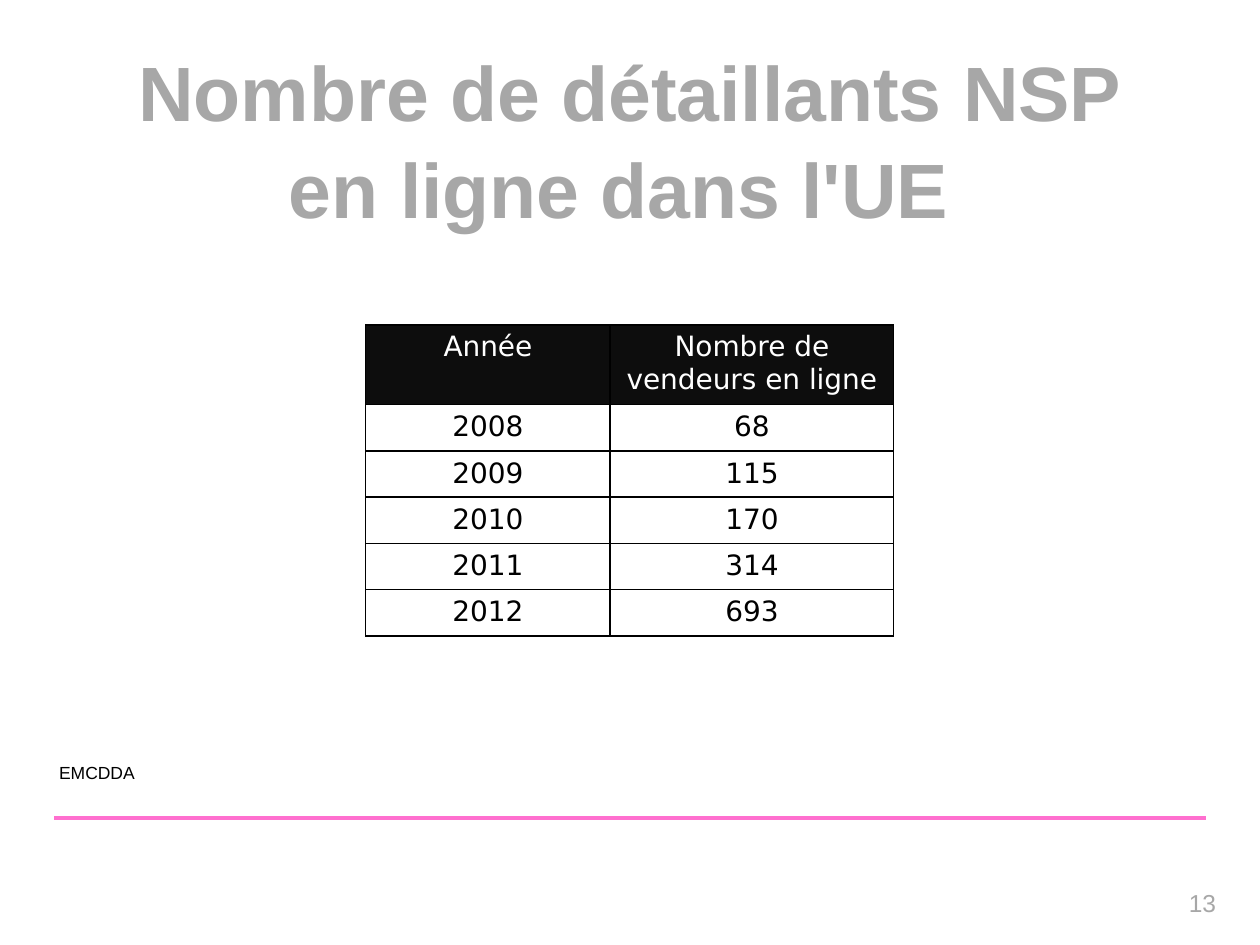
"""Build the slide on the number of online NSP retailers in the EU."""
import lxml.etree
import pptx
import pptx.dml.color
import pptx.enum.shapes
import pptx.enum.text
import pptx.oxml
import pptx.oxml.ns
import pptx.util

Pt = pptx.util.Pt
RGBColor = pptx.dml.color.RGBColor
ALIGN = pptx.enum.text.PP_ALIGN
qn = pptx.oxml.ns.qn

GREY = RGBColor(0xA7, 0xA7, 0xA7)
BLACK = RGBColor(0, 0, 0)
INK = RGBColor(0x0D, 0x0D, 0x0D)
WHITE = RGBColor(0xFF, 0xFF, 0xFF)
PINK = RGBColor(0xFF, 0x6F, 0xCF)

RETAILERS = [
    ("Année", "Nombre de vendeurs en ligne"),
    ("2008", "68"),
    ("2009", "115"),
    ("2010", "170"),
    ("2011", "314"),
    ("2012", "693"),
]


class Deck:
    font = "Arial"
    table_font = "DejaVu Sans"

    def __init__(self, width, height):
        self.prs = pptx.Presentation()
        self.prs.slide_width, self.prs.slide_height = Pt(width), Pt(height)
        self.s = self.prs.slides.add_slide(self.prs.slide_layouts[6])

    def style(self, tf, size, color, align, font, bold=False):
        for p in tf.paragraphs:
            p.alignment = align
            for r in p.runs:
                r.font.name, r.font.size, r.font.bold = font, Pt(size), bold
                r.font.color.rgb = color

    def text(self, text, box, size, color, align=ALIGN.LEFT, bold=False,
             wrap=True, inset=(7.2, 3.6), spacing=None):
        tf = self.s.shapes.add_textbox(*map(Pt, box)).text_frame
        tf.word_wrap = wrap
        tf.margin_left = tf.margin_right = Pt(inset[0])
        tf.margin_top = tf.margin_bottom = Pt(inset[1])
        tf.text = text
        if spacing:
            tf.paragraphs[0].line_spacing = spacing
        self.style(tf, size, color, align, self.font, bold)

    def line(self, x1, y1, x2, y2, color, width):
        kind = pptx.enum.shapes.MSO_CONNECTOR.STRAIGHT
        sp = self.s.shapes.add_connector(kind, *map(Pt, (x1, y1, x2, y2)))
        sp.line.color.rgb, sp.line.width = color, Pt(width)
        lxml.etree.SubElement(sp._element.spPr, qn("a:effectLst"))

    def borders(self, cell, color, width):
        tc_pr = cell._tc.get_or_add_tcPr()
        for side in ("lnL", "lnR", "lnT", "lnB"):
            ln = lxml.etree.SubElement(tc_pr, qn(f"a:{side}"), w=str(Pt(width)))
            fill = lxml.etree.SubElement(ln, qn("a:solidFill"))
            lxml.etree.SubElement(fill, qn("a:srgbClr"), val=str(color))

    def table(self, rows, left, top, widths, heights, size):
        table = self.s.shapes.add_table(
            len(rows), len(widths), Pt(left), Pt(top),
            Pt(sum(widths)), Pt(sum(heights))).table
        table.first_row = table.horz_banding = False
        for col, width in zip(table.columns, widths):
            col.width = Pt(width)
        for i, (row, height) in enumerate(zip(rows, heights)):
            table.rows[i].height = Pt(height)
            for j, value in enumerate(row):
                cell = table.cell(i, j)
                self.borders(cell, BLACK, 1)
                if i == 0:
                    cell.fill.solid()
                    cell.fill.fore_color.rgb = INK
                else:
                    cell.fill.background()
                cell.text_frame.text = value
                self.style(cell.text_frame, size, BLACK if i else WHITE,
                           ALIGN.CENTER, self.table_font)


def main():
    deck = Deck(720, 540)
    deck.line(31, 467.3, 689, 467.3, PINK, 2)
    deck.text("13", (653.8, 504, 48.2, 36), 14, GREY, ALIGN.RIGHT)
    deck.text("Nombre de détaillants NSP en ligne dans l'UE ",
              (54, 18, 612, 113.8), 44, GREY, ALIGN.CENTER, bold=True,
              inset=(7.2, 5), spacing=1.05)
    deck.text("EMCDDA", (30.2, 432, 51.8, 19.4), 10, BLACK, wrap=False,
              inset=(3.6, 3.6))
    deck.table(RETAILERS, 209, 185.6, (139.7, 162), [41] + [23.8] * 5, 16)
    deck.prs.save("out.pptx")


if __name__ == "__main__":
    main()
